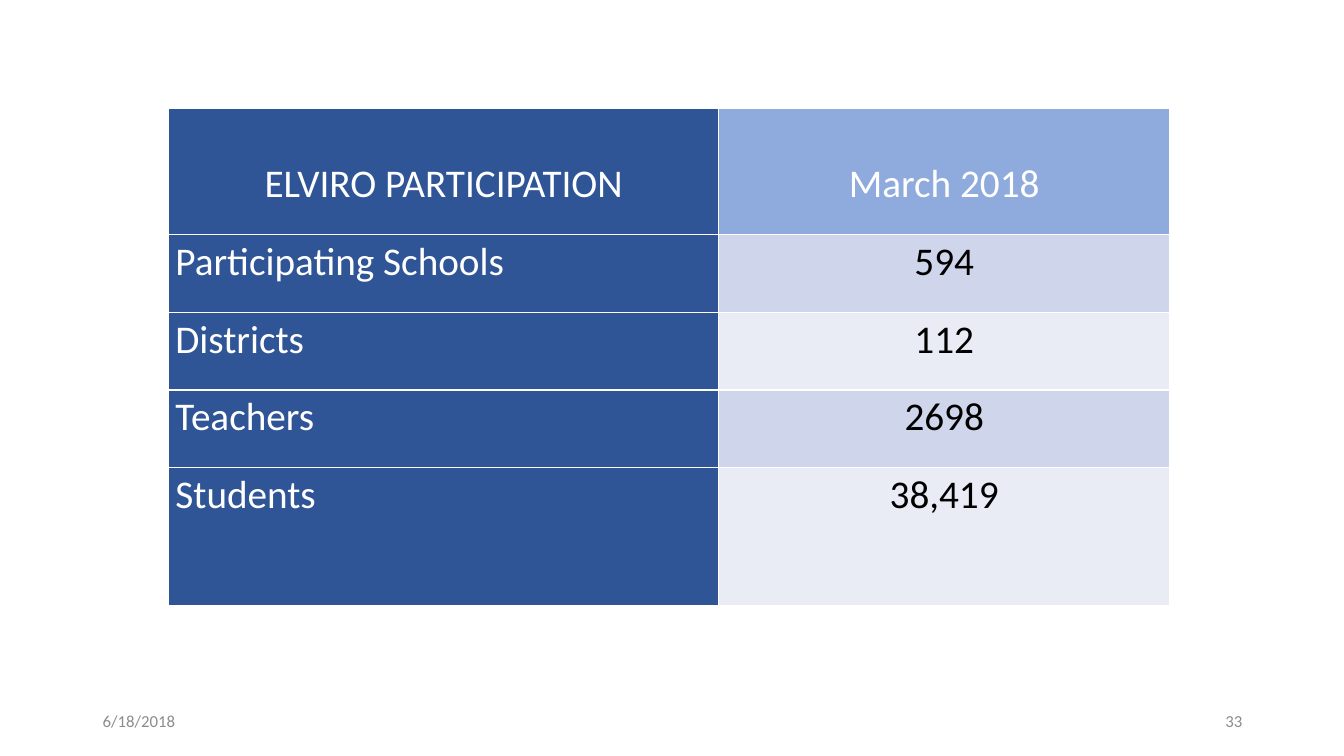
import dataclasses

import lxml.etree
import pptx
import pptx.dml.color
import pptx.enum.text
import pptx.oxml.ns
import pptx.slide
import pptx.table
import pptx.text.text
import pptx.util

EMU_PER_PX = 9144  # 100 px to the inch
FONT = "Calibri"
WHITE, BLACK, GREY = "FFFFFF", "000000", "8C8C8C"
DARK_BLUE, LIGHT_BLUE = "2F5597", "8FAADC"
BANDS = ("CFD5EA", "E9EBF5")
LEFT = pptx.enum.text.PP_ALIGN.LEFT
CENTER = pptx.enum.text.PP_ALIGN.CENTER
RIGHT = pptx.enum.text.PP_ALIGN.RIGHT

COLUMN_WIDTHS = (546, 447)
HEADER_TOP_INSET = 48


@dataclasses.dataclass(frozen=True)
class TableRow:
    label: str
    value: str
    height: int


@dataclasses.dataclass(frozen=True)
class Footer:
    text: str
    left: int
    align: pptx.enum.text.PP_ALIGN


ROWS = (
    TableRow("ELVIRO PARTICIPATION", "March 2018", 125),
    TableRow("Participating Schools", "594", 77),
    TableRow("Districts", "112", 77),
    TableRow("Teachers", "2698", 77),
    TableRow("Students", "38,419", 137),
)
FOOTERS = (Footer("6/18/2018", 92, LEFT), Footer("33", 942, RIGHT))


def px(length: int) -> pptx.util.Emu:
    return pptx.util.Emu(length * EMU_PER_PX)


def rgb(color: str) -> pptx.dml.color.RGBColor:
    return pptx.dml.color.RGBColor.from_string(color)


def write(frame: pptx.text.text.TextFrame, text: str, size: int, color: str,
          align: pptx.enum.text.PP_ALIGN, line_spacing: float = 1.0) -> None:
    para = frame.paragraphs[0]
    para.alignment = align
    para.line_spacing = line_spacing
    span = para.add_run()
    span.text = text
    span.font.name = FONT
    span.font.size = pptx.util.Pt(size)
    span.font.color.rgb = rgb(color)


def add_borders(cell: pptx.table._Cell, color: str, width: int) -> None:
    """Rule all four sides; call before filling, as fills follow lines in the XML."""
    properties = cell._tc.get_or_add_tcPr()
    qn = pptx.oxml.ns.qn
    for side in ("lnL", "lnR", "lnT", "lnB"):
        line = lxml.etree.SubElement(properties, qn(f"a:{side}"), w=str(pptx.util.Pt(width)))
        fill = lxml.etree.SubElement(line, qn("a:solidFill"))
        lxml.etree.SubElement(fill, qn("a:srgbClr"), val=color)


def fill_cell(cell: pptx.table._Cell, text: str, fill: str, color: str,
              align: pptx.enum.text.PP_ALIGN, top_inset: int) -> None:
    cell.margin_left = cell.margin_right = px(7)
    cell.margin_top, cell.margin_bottom = px(top_inset), px(0)
    add_borders(cell, WHITE, 1)
    cell.fill.solid()
    cell.fill.fore_color.rgb = rgb(fill)
    write(cell.text_frame, text, 28, color, align, 1.07)


def add_participation_table(page: pptx.slide.Slide) -> None:
    height = sum(row.height for row in ROWS)
    table = page.shapes.add_table(len(ROWS), len(COLUMN_WIDTHS), px(167), px(108),
                                  px(sum(COLUMN_WIDTHS)), px(height)).table
    for column, width in zip(table.columns, COLUMN_WIDTHS):
        column.width = px(width)
    for index, row in enumerate(ROWS):
        table.rows[index].height = px(row.height)
        is_header = index == 0
        inset = HEADER_TOP_INSET if is_header else 0
        fill_cell(table.cell(index, 0), row.label, DARK_BLUE, WHITE,
                  CENTER if is_header else LEFT, inset)
        fill_cell(table.cell(index, 1), row.value,
                  LIGHT_BLUE if is_header else BANDS[(index - 1) % 2],
                  WHITE if is_header else BLACK, CENTER, inset)


def add_footer(page: pptx.slide.Slide, footer: Footer) -> None:
    box = page.shapes.add_textbox(px(footer.left), px(695), px(300), px(40))
    frame = box.text_frame
    frame.word_wrap = True
    frame.vertical_anchor = pptx.enum.text.MSO_ANCHOR.MIDDLE
    write(frame, footer.text, 12, GREY, footer.align)


def main() -> None:
    deck = pptx.Presentation()
    deck.slide_width, deck.slide_height = px(1333), px(750)
    page = deck.slides.add_slide(deck.slide_layouts[6])
    add_participation_table(page)
    for footer in FOOTERS:
        add_footer(page, footer)
    deck.save("out.pptx")


if __name__ == "__main__":
    main()
